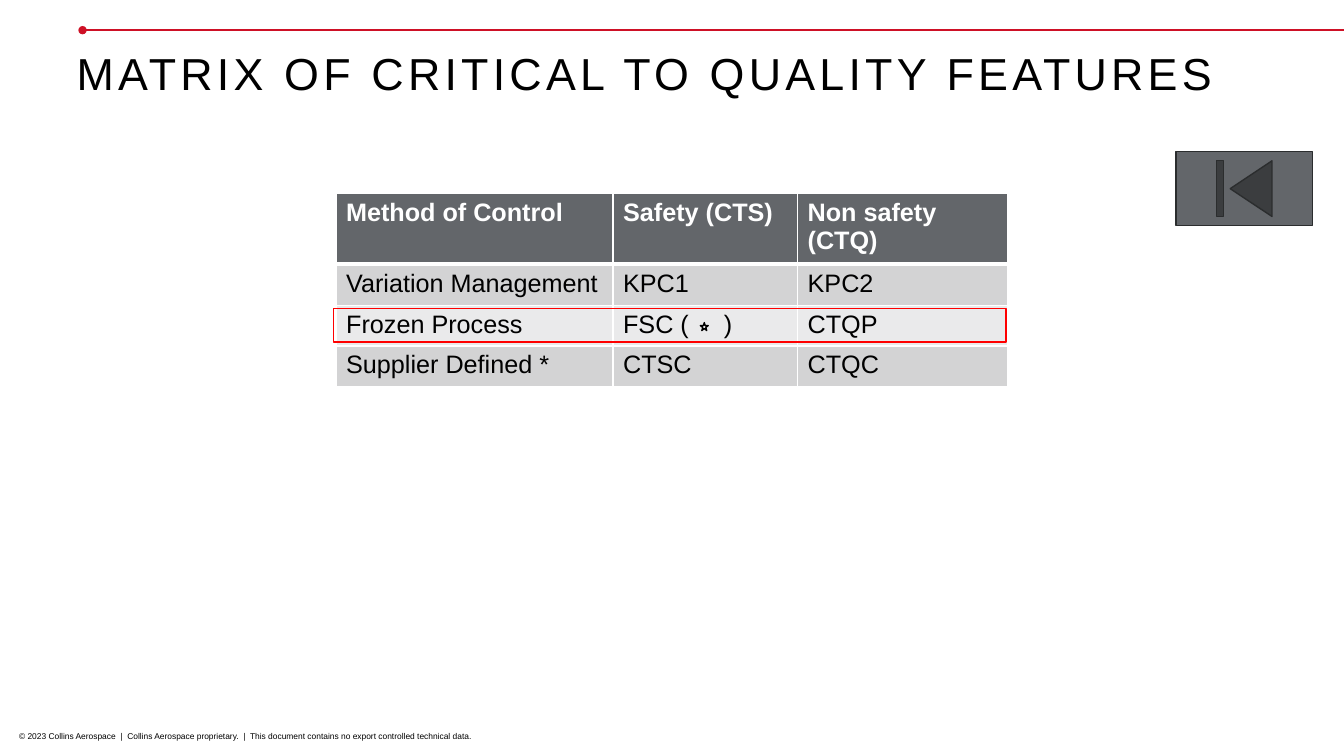
from lxml import etree
from pptx import Presentation
from pptx import util as u
from pptx.dml.color import RGBColor
from pptx.enum import shapes, text
from pptx.oxml import ns

RED = RGBColor(0xCE, 0x11, 0x26)
MARK = RGBColor(0xFF, 0x00, 0x00)
BLACK = RGBColor(0x00, 0x00, 0x00)
WHITE = RGBColor(0xFF, 0xFF, 0xFF)
SLATE = RGBColor(0x63, 0x66, 0x6A)
EDGE = RGBColor(0x2B, 0x2D, 0x2E)
GREY = RGBColor(0xD3, 0xD3, 0xD4)
PALE = RGBColor(0xEA, 0xEA, 0xEB)

ROWS = [
    ("Method of Control", "Safety (CTS)", "Non safety (CTQ)"),
    ("Variation Management", "KPC1", "KPC2"),
    ("Frozen Process", "FSC (\t)", "CTQP"),
    ("Supplier Defined *", "CTSC", "CTQC"),
]
COLS = (6.98, 4.65, 5.29)
HEAD, BODY = 1.67, 1.03


def add(root, tag, **attrs):
    return etree.SubElement(root, ns.qn(tag), **attrs)


def write(frame, words, size=18, color=BLACK, bold=False, gap=None, line=None, tab=None):
    para = frame.paragraphs[0]
    if line:
        para.line_spacing = line
    if tab:
        stops = add(para._p.get_or_add_pPr(), "a:tabLst")
        add(stops, "a:tab", pos=str(u.Cm(tab)), algn="l")
    run = para.add_run()
    run.text = words
    font = run.font
    font.name, font.size, font.bold = "Arial", u.Pt(size), bold
    font.color.rgb = color
    if gap:
        run._r.get_or_add_rPr().set("spc", str(gap * 100))


class Page:
    def __init__(self, deck):
        self.slide = deck.slides.add_slide(deck.slide_layouts[6])
        self.items = self.slide.shapes

    def rule(self, x, y, end, color, width):
        line = self.items.add_connector(
            shapes.MSO_CONNECTOR.STRAIGHT, u.Cm(x), u.Cm(y), u.Cm(end), u.Cm(y))
        line.line.color.rgb = color
        line.line.width = u.Pt(width)
        add(line.line._get_or_add_ln(), "a:headEnd", type="oval")
        add(line._element.spPr, "a:effectLst")

    def label(self, box, words, inset=None, **style):
        frame = self.items.add_textbox(*map(u.Cm, box)).text_frame
        frame.word_wrap = True
        if inset is not None:
            frame.margin_left = frame.margin_right = u.Cm(inset)
            frame.margin_top = frame.margin_bottom = u.Cm(inset)
        write(frame, words, **style)

    def shape(self, kind, box, edge, fill=None):
        item = self.items.add_shape(kind, *map(u.Cm, box))
        item.shadow.inherit = False
        if fill is None:
            item.fill.background()
        else:
            item.fill.solid()
            item.fill.fore_color.rgb = fill
        item.line.color.rgb = edge
        item.line.width = u.Pt(1)

    def border(self, cell, row):
        props = cell._tc.get_or_add_tcPr()
        thick = {"T": 3 if row == 1 else 1, "B": 3 if row == 0 else 1}
        for spot, side in enumerate("LRTB"):
            line = etree.Element(ns.qn(f"a:ln{side}"), w=str(u.Pt(thick.get(side, 1))))
            add(add(line, "a:solidFill"), "a:srgbClr", val=str(WHITE))
            props.insert(spot, line)

    def table(self, x, y):
        high = HEAD + BODY * (len(ROWS) - 1)
        grid = self.items.add_table(
            len(ROWS), len(COLS), u.Cm(x), u.Cm(y), u.Cm(sum(COLS)), u.Cm(high)).table
        for col, wide in zip(grid.columns, COLS):
            col.width = u.Cm(wide)
        for r, words in enumerate(ROWS):
            top = r == 0
            grid.rows[r].height = u.Cm(HEAD if top else BODY)
            for c, word in enumerate(words):
                cell = grid.cell(r, c)
                cell.fill.solid()
                cell.fill.fore_color.rgb = SLATE if top else GREY if r % 2 else PALE
                self.border(cell, r)
                write(cell.text_frame, word, color=WHITE if top else BLACK, bold=top,
                      tab=2.54 if "\t" in word else None)


def main():
    deck = Presentation()
    deck.slide_width, deck.slide_height = u.Cm(33.87), u.Cm(19.05)
    page = Page(deck)
    kind = shapes.MSO_SHAPE
    page.rule(2.08, 0.76, 33.87, RED, 1.5)
    page.label((0.23, 18.29, 28, 0.76),
               "© 2023 Collins Aerospace  |  Collins Aerospace proprietary.  |  "
               "This document contains no export controlled technical data.", size=6)
    page.label((1.93, 1.42, 30.02, 1.88), "MATRIX OF CRITICAL TO QUALITY FEATURES",
               inset=0, size=32, gap=3, line=0.8)
    page.table(8.47, 4.88)
    page.shape(kind.STAR_5_POINT, (17.65, 8.13, 0.2, 0.2), BLACK)
    page.shape(kind.RECTANGLE, (8.41, 7.77, 16.94, 0.85), MARK)
    page.shape(kind.ACTION_BUTTON_BEGINNING, (29.64, 3.82, 3.43, 1.87), EDGE, SLATE)
    deck.save("out.pptx")


if __name__ == "__main__":
    main()
